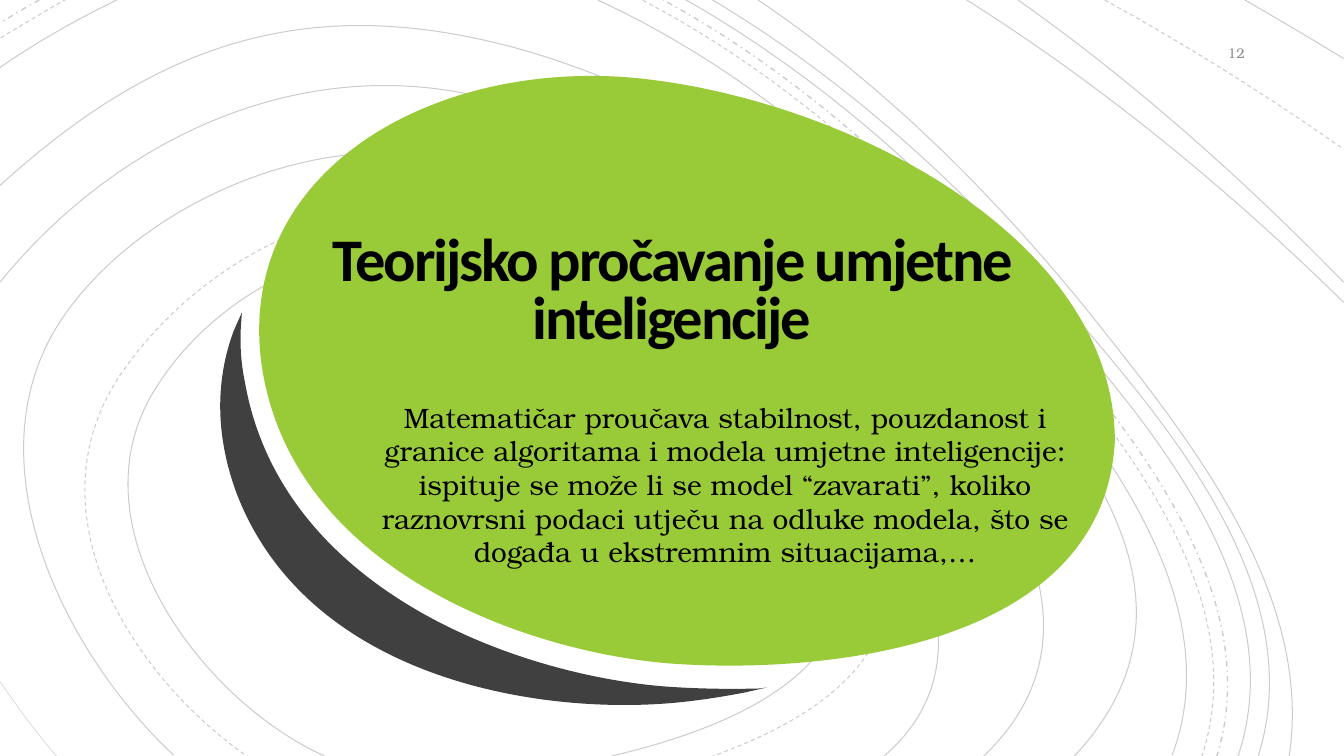
"""Builds the slide on the theoretical study of artificial intelligence."""
import lxml.etree
import pptx
import pptx.dml.color
import pptx.enum.dml
import pptx.enum.text
import pptx.oxml.ns
import pptx.util

COLORS = {"ink": "000000", "leaf": "99CB38", "shade": "404040", "muted": "8C8C8C"}
DASH = pptx.enum.dml.MSO_LINE
ALIGN = pptx.enum.text.PP_ALIGN
ANCHOR = pptx.enum.text.MSO_ANCHOR
HUNDREDTH_INCH = pptx.util.Pt(0.72)

SOLID_ORBITS = [
    [(876, 751), (1025, 625, 835, 409, 738, 315), (649, 230, 536, 164, 412, 153),
     (287, 141, 141, 208, 68, 307), (-36, 447, 60, 644, 172, 749)],
    [(607, 750), (710, 726, 880, 667, 825, 529), (773, 399, 615, 278, 480, 248),
     (357, 220, 216, 281, 151, 391), (73, 524, 200, 695, 322, 750)],
    [(975, 751), (1130, 604, 950, 413, 838, 306), (732, 206, 603, 120, 458, 92),
     (284, 59, 111, 143, 0, 280)],
    [(1065, 751), (1213, 595, 1067, 422, 944, 307), (817, 189, 667, 87, 498, 44),
     (298, -6, 152, 46, 0, 184)],
    [(1163, 749), (1226, 581, 1064, 401, 963, 287), (858, 170, 736, 66, 593, 0)],
    [(116, 0), (79, 18, 39, 40, 0, 67)],
    [(1228, 751), (1283, 588, 1144, 425, 1046, 312), (941, 190, 820, 79, 679, -1)],
    [(1248, 751), (1299, 590, 1167, 432, 1070, 318), (966, 195, 846, 83, 707, 0)],
    [(1279, 750), (1303, 590, 1182, 438, 1090, 322), (993, 200, 881, 87, 752, 0)],
    [(1333, 300), (1219, 188, 1094, 85, 959, 0)],
    [(1333, 280), (1220, 164, 1112, 72, 1010, 0)],
    [(1235, 0), (1268, 19, 1300, 38, 1333, 58)],
]
HAIRLINE_ORBITS = [[(0, 676), (19, 704, 37, 728, 56, 750)]]
DASHED_ORBITS = [
    [(705, 751), (765, 729, 835, 696, 867, 638), (906, 568, 864, 495, 817, 440),
     (723, 329, 592, 227, 443, 209), (319, 195, 193, 267, 122, 368),
     (27, 504, 127, 668, 246, 751)],
    [(1192, 751), (1248, 586, 1098, 415, 1000, 301), (897, 181, 777, 73, 637, 0)],
    [(66, -1), (45, 11, 23, 24, 0, 38)],
    [(1096, 0), (1176, 44, 1256, 94, 1333, 148)],
]
DASH_DOT_ORBITS = [
    [(1207, 751), (1259, 585, 1113, 417, 1015, 302), (913, 183, 795, 75, 658, 0)],
    [(39, 0), (26, 7, 13, 15, 0, 23)],
]
CRESCENT = [(240, 310), (239, 324), (238, 341, 239, 360, 243, 379),
            (279, 585, 512, 669, 659, 681), (686, 683, 719, 684, 754, 683),
            (761, 682), (739, 687), (718, 691, 699, 694, 681, 696),
            (542, 712, 307, 676, 235, 490), (213, 431, 214, 376, 232, 328)]
PEBBLE = [(261, 371), (227, 175, 423, 60, 626, 77), (829, 95, 1106, 231, 1106, 438),
          (1094, 648, 803, 669, 662, 658), (521, 646, 296, 566, 261, 371)]


def rgb(name):
    """Return the palette colour with this name."""
    return pptx.dml.color.RGBColor.from_string(COLORS[name])


def write_text(frame, text, *, font, size, color="ink", bold=False, align=ALIGN.CENTER,
               line_spacing=None, before=0, after=0, tracking=0):
    """Write one formatted paragraph into a text frame."""
    paragraph = frame.paragraphs[0]
    paragraph.alignment = align
    paragraph.line_spacing = line_spacing
    paragraph.space_before = pptx.util.Pt(before)
    paragraph.space_after = pptx.util.Pt(after)
    run = paragraph.add_run()
    run.text = text
    run.font.name = font
    run.font.size = pptx.util.Pt(size)
    run.font.bold = bold
    run.font.color.rgb = rgb(color)
    if tracking:
        run.font._element.set("spc", str(round(tracking * 100)))


class SlidePainter:
    """Holds the style and the current slide."""

    heading_font = "Calibri"
    body_font = "TeX Gyre Bonum"
    orbit_opacity = 20

    def __init__(self, slide):
        """Keep the slide to draw on."""
        self.slide = slide

    def outline(self, segments, close):
        """Draw an outline from a start point, lines of two numbers and curves of six."""
        start, *rest = segments
        builder = self.slide.shapes.build_freeform(*start, scale=HUNDREDTH_INCH)
        points = [pair for segment in rest for pair in zip(segment[::2], segment[1::2])]
        builder.add_line_segments(points, close=close)
        outline = builder.convert_to_shape()
        outline.shadow.inherit = False
        qn = pptx.oxml.ns.qn
        lines = iter(list(outline._element.iter(qn("a:lnTo"))))
        for segment in rest:
            first = next(lines)
            if len(segment) == 6:
                curve = lxml.etree.Element(qn("a:cubicBezTo"))
                first.addprevious(curve)
                for line in (first, next(lines), next(lines)):
                    curve.append(line[0])
                    line.getparent().remove(line)
        return outline

    def orbit(self, segments, width, dash):
        """Draw a faint open curve."""
        orbit = self.outline(segments, close=False)
        orbit.fill.background()
        orbit.line.width = pptx.util.Pt(width)
        orbit.line.color.rgb = rgb("ink")
        orbit.line.dash_style = dash
        qn = pptx.oxml.ns.qn
        ink = orbit.line._ln.find(qn("a:solidFill"))[0]
        lxml.etree.SubElement(ink, qn("a:alpha"), val=str(self.orbit_opacity * 1000))

    def stone(self, segments, color):
        """Draw a filled closed outline."""
        stone = self.outline(segments, close=True)
        stone.fill.solid()
        stone.fill.fore_color.rgb = rgb(color)
        stone.line.fill.background()

    def text(self, text, box, insets, anchor, **style):
        """Place a wrapped text box."""
        frame = self.slide.shapes.add_textbox(*map(pptx.util.Pt, box)).text_frame
        frame.word_wrap = True
        frame.vertical_anchor = anchor
        (frame.margin_left, frame.margin_top,
         frame.margin_right, frame.margin_bottom) = map(pptx.util.Pt, insets)
        write_text(frame, text, **style)


def main():
    """Build and save the slide."""
    deck = pptx.Presentation()
    deck.slide_width = pptx.util.Pt(960)
    deck.slide_height = pptx.util.Pt(540)
    painter = SlidePainter(deck.slides.add_slide(deck.slide_layouts[6]))

    for orbits, width, dash in (
        (SOLID_ORBITS, 0.75, DASH.SOLID),
        (HAIRLINE_ORBITS, 0.38, DASH.SOLID),
        (DASHED_ORBITS, 0.75, DASH.DASH),
        (DASH_DOT_ORBITS, 1, DASH.DASH_DOT),
    ):
        for orbit in orbits:
            painter.orbit(orbit, width, dash)

    painter.stone(CRESCENT, "shade")
    painter.stone(PEBBLE, "leaf")

    painter.text("Teorijsko pročavanje umjetne inteligencije",
                 (206, 162, 548, 131), (18, 0, 18, 42), ANCHOR.BOTTOM,
                 font=painter.heading_font, size=43.2, bold=True,
                 line_spacing=0.8, tracking=-1.5)
    painter.text("Matematičar proučava stabilnost, pouzdanost i granice algoritama i modela "
                 "umjetne inteligencije: ispituje se može li se model “zavarati”, koliko "
                 "raznovrsni podaci utječu na odluke modela, što se događa u ekstremnim "
                 "situacijama,…",
                 (247, 278.6, 542, 138.2), (7.2, 0, 7.2, 3.6), ANCHOR.MIDDLE,
                 font=painter.body_font, size=20, before=10)
    painter.text("12", (824.4, 25.2, 72, 25.2), (7.2, 3.6, 7.2, 3.6), ANCHOR.MIDDLE,
                 font=painter.body_font, size=10, color="muted",
                 align=ALIGN.RIGHT, after=6)
    deck.save("out.pptx")


if __name__ == "__main__":
    main()
